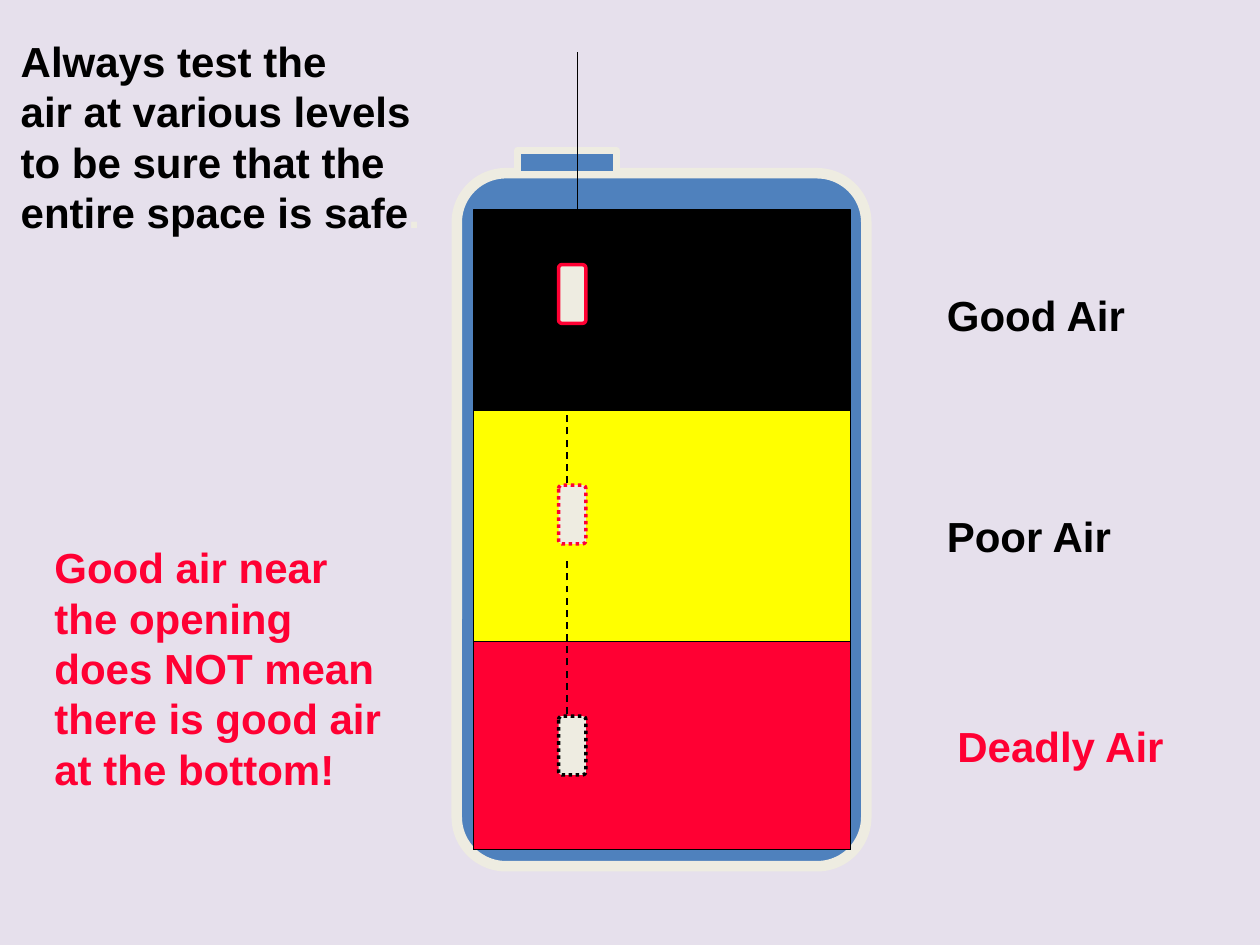
from lxml.etree import SubElement
from pptx import Presentation
from pptx.dml.color import RGBColor
from pptx.enum.dml import MSO_LINE as Dash
from pptx.enum.shapes import MSO_CONNECTOR, MSO_SHAPE as Shape
from pptx.enum.text import MSO_AUTO_SIZE
from pptx.oxml.ns import qn
from pptx.util import Inches, Pt

BLACK = RGBColor(0x00, 0x00, 0x00)
RED = RGBColor(0xFF, 0x00, 0x33)
YELLOW = RGBColor(0xFF, 0xFF, 0x00)
BLUE = RGBColor(0x4F, 0x81, 0xBD)
CREAM = RGBColor(0xEE, 0xEC, 0xE1)
LAVENDER = RGBColor(0xE6, 0xE0, 0xEC)

deck = Presentation()
deck.slide_width, deck.slide_height = Inches(10), Inches(7.5)
slide = deck.slides.add_slide(deck.slide_layouts[6])
slide.background.fill.solid()
slide.background.fill.fore_color.rgb = LAVENDER

# Grid of 120 columns by 90 rows
CELL = deck.slide_width / 120


def add_block(kind, box, fill, edge, weight, rounding=None):
    block = slide.shapes.add_shape(kind, *[round(n * CELL) for n in box])
    block.shadow.inherit = False
    block.fill.solid()
    block.fill.fore_color.rgb = fill
    block.line.color.rgb = edge
    block.line.width = Pt(weight)
    if rounding is not None:
        block.adjustments[0] = rounding
    return block


def add_words(box, lines, color, wrap=True):
    words = slide.shapes.add_textbox(*[round(n * CELL) for n in box])
    frame = words.text_frame
    frame.word_wrap = wrap
    frame.auto_size = MSO_AUTO_SIZE.SHAPE_TO_FIT_TEXT
    frame.text = "\n".join(lines)
    for paragraph in frame.paragraphs:
        font = paragraph.font
        font.name, font.size, font.bold = "Arial", Pt(24), True
        font.color.rgb = color
    return frame


# Tank, with each air layer reaching down to the same floor
add_block(Shape.ROUNDED_RECTANGLE, (43.5, 16.5, 39, 66), BLUE, CREAM, 6, 0.12)
FLOOR = 80.9
for top, air in ((20, BLACK), (39.1, YELLOW), (61.1, RED)):
    add_block(Shape.RECTANGLE, (45.1, top, 35.9, FLOOR - top), air, BLACK, 1)
add_block(Shape.RECTANGLE, (49.3, 14.3, 9.4, 2.3), BLUE, CREAM, 4)

# Advice
advice = add_words(
    (0.8, 2.8, 41, 20.6),
    ["Always test the", "air at various levels", "to be sure that the", "entire space is safe"],
    BLACK, wrap=False)
full_stop = advice.paragraphs[-1].add_run()
full_stop.text = "."
full_stop.font.color.rgb = CREAM

# Air tester at three depths
for top, edge, dash in ((25.2, RED, None), (46.2, RED, Dash.ROUND_DOT), (68.2, BLACK, Dash.ROUND_DOT)):
    tester = add_block(Shape.ROUNDED_RECTANGLE, (53.2, top, 2.6, 5.6), CREAM, edge, 2, 0.125)
    if dash:
        tester.line.dash_style = dash

# Cord that lowers the tester
for column, start, end, dash in ((55, 25, 5, None), (54, 46, 31, Dash.DASH), (54, 68, 53, Dash.DASH)):
    cord = slide.shapes.add_connector(
        MSO_CONNECTOR.STRAIGHT, *[round(n * CELL) for n in (column, start, column, end)])
    cord.line.color.rgb = BLACK
    cord.line.width = Pt(1)
    if dash:
        cord.line.dash_style = dash
    SubElement(cord.element.spPr, qn("a:effectLst"))

# Layer labels and warning
for box, label, color in (
    ((89, 27, 26, 6.1), "Good Air", BLACK),
    ((89, 48, 23, 6.1), "Poor Air", BLACK),
    ((90, 68, 26, 6.1), "Deadly Air", RED),
    ((4, 51, 34, 25.2),
     "Good air near the opening does NOT mean there is good air at the bottom!", RED),
):
    add_words(box, [label], color)

deck.save("out.pptx")
